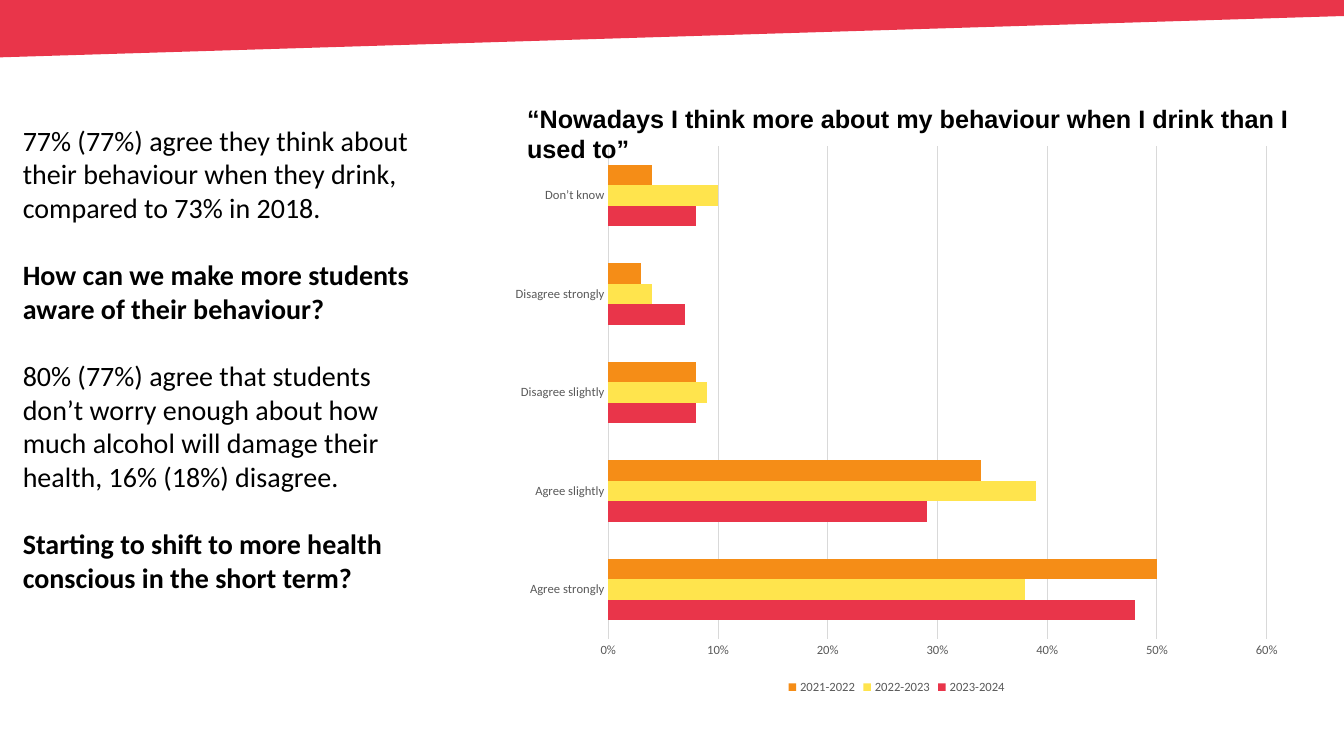
from pptx import Presentation
from pptx.chart.data import CategoryChartData as ChartData
from pptx.dml.color import RGBColor
from pptx.enum.chart import XL_CHART_TYPE as Chart, XL_LEGEND_POSITION as Legend
from pptx.enum.chart import XL_TICK_MARK as Tick
from pptx.util import Pt

RED = RGBColor(0xE9, 0x35, 0x4A)
YELLOW = RGBColor(0xFF, 0xE4, 0x4D)
ORANGE = RGBColor(0xF5, 0x8D, 0x17)
BLACK = RGBColor(0, 0, 0)
GREY = RGBColor(0x59, 0x59, 0x59)
PALE = RGBColor(0xD9, 0xD9, 0xD9)

WIDTH, HEIGHT = 960, 540
TITLE = "“Nowadays I think more about my behaviour when I drink than I used to”"
NOTES = [
    ("77% (77%) agree they think about their behaviour when they drink, "
     "compared to 73% in 2018.", False),
    ("How can we make more students aware of their behaviour?", True),
    ("80% (77%) agree that students don’t worry enough about how much alcohol "
     "will damage their health, 16% (18%) disagree.", False),
    ("Starting to shift to more health conscious in the short term?", True),
]
ANSWERS = ["Agree strongly", "Agree slightly", "Disagree slightly",
           "Disagree strongly", "Don’t know"]
YEARS = [
    ("2023-2024", RED, (0.48, 0.29, 0.08, 0.07, 0.08)),
    ("2022-2023", YELLOW, (0.38, 0.39, 0.09, 0.04, 0.1)),
    ("2021-2022", ORANGE, (0.5, 0.34, 0.08, 0.03, 0.04)),
]


def style(font, name, size, color, bold=False):
    font.name, font.size, font.bold = name, Pt(size), bold
    font.color.rgb = color


def add_band(slide, left, top, width, height):
    """Draw the slanted red band across the top."""
    pen = slide.shapes.build_freeform(Pt(left), Pt(top))
    right = left + width
    pen.add_line_segments([(Pt(x), Pt(y)) for x, y in (
        (left, top + height), (right, top + 0.28 * height), (right, top))])
    band = pen.convert_to_shape()
    band.shadow.inherit = False
    band.fill.solid()
    band.fill.fore_color.rgb = RED
    band.line.fill.background()


def add_text(slide, box, items, name, size, gap=0):
    """Write (text, bold) items as paragraphs, set apart by gap."""
    frame = slide.shapes.add_textbox(*map(Pt, box)).text_frame
    frame.word_wrap = True
    for i, (text, bold) in enumerate(items):
        para = frame.add_paragraph() if i else frame.paragraphs[0]
        para.text = text
        if i:
            para.space_before = Pt(gap)
        style(para.font, name, size, BLACK, bold)


def add_bars(slide, box):
    data = ChartData(number_format="0%")
    data.categories = ANSWERS
    for year, _, shares in YEARS:
        data.add_series(year, shares)
    chart = slide.shapes.add_chart(
        Chart.BAR_CLUSTERED, *map(Pt, box), data).chart
    style(chart.font, "Calibri", 10, BLACK)
    chart.has_title = False

    plot = chart.plots[0]
    plot.gap_width, plot.overlap = 182, 0
    plot.vary_by_categories = False
    for bars, (_, color, _) in zip(plot.series, YEARS):
        bars.format.fill.solid()
        bars.format.fill.fore_color.rgb = color

    cats, vals = chart.category_axis, chart.value_axis
    for axis in (cats, vals):
        axis.major_tick_mark = axis.minor_tick_mark = Tick.NONE
        style(axis.tick_labels.font, "Calibri", 9, GREY)
    vals.minimum_scale, vals.maximum_scale, vals.major_unit = 0, 0.6, 0.1
    vals.tick_labels.number_format = "0%"
    vals.tick_labels.number_format_is_linked = False
    vals.format.line.fill.background()
    vals.has_major_gridlines = True
    for line in (cats.format.line, vals.major_gridlines.format.line):
        line.color.rgb = PALE
        line.width = Pt(0.75)

    chart.has_legend = True
    chart.legend.position = Legend.BOTTOM
    chart.legend.include_in_layout = False
    style(chart.legend.font, "Calibri", 9, GREY)


def main():
    deck = Presentation()
    deck.slide_width, deck.slide_height = Pt(WIDTH), Pt(HEIGHT)
    slide = deck.slides.add_slide(deck.slide_layouts[6])
    add_band(slide, 0, 0, WIDTH, 41)
    add_text(slide, (9.2, 84.5, 302, 455), NOTES, "Calibri", 20, gap=24)
    add_bars(slide, (357, 96.5, 567, 402.5))
    add_text(slide, (369.4, 70, 560, 51), [(TITLE, True)], "Arial", 18)
    deck.save("out.pptx")


if __name__ == "__main__":
    main()
